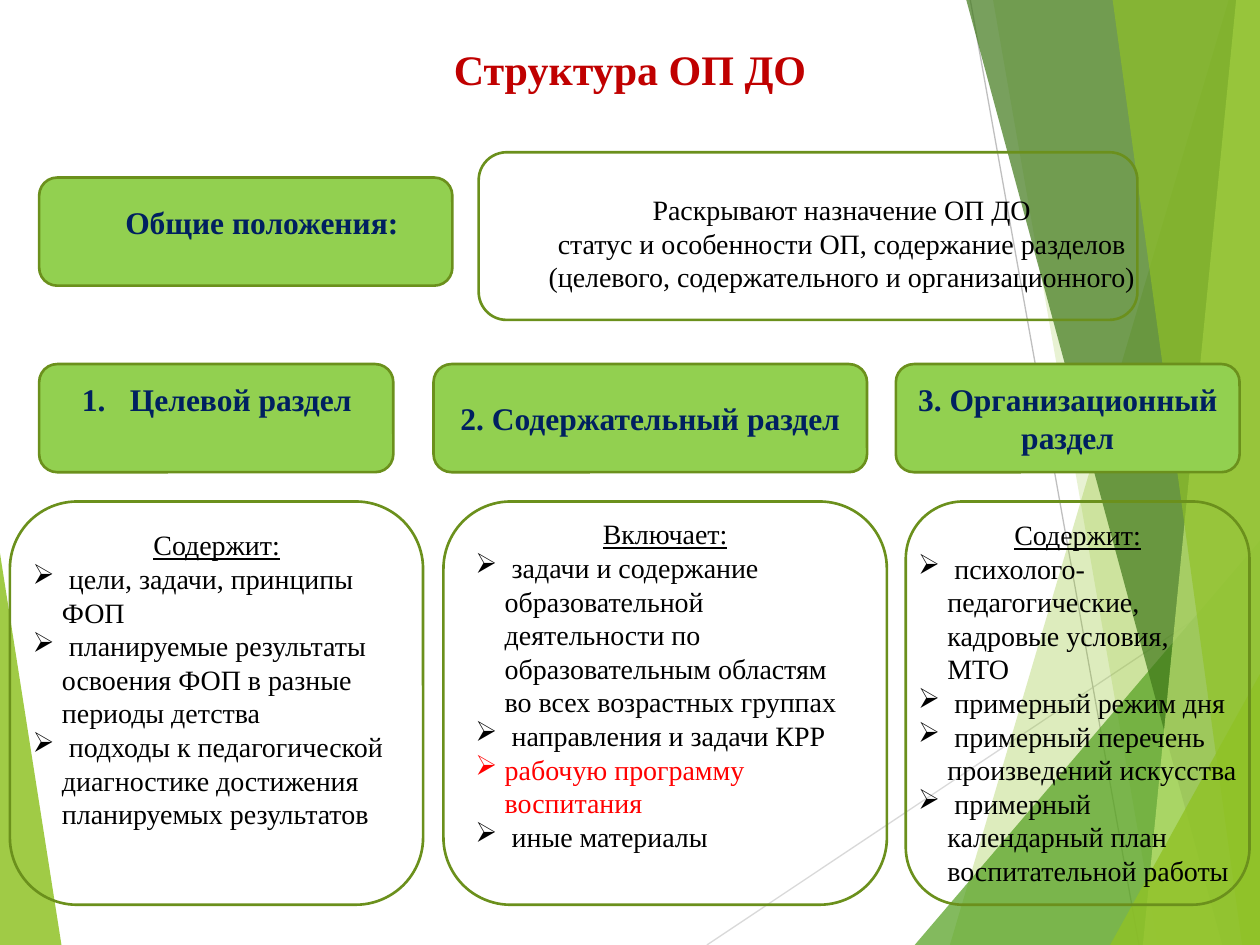
from lxml.etree import SubElement
from pptx import Presentation
from pptx.dml.color import RGBColor
from pptx.enum.shapes import MSO_CONNECTOR as Connector, MSO_SHAPE as Shape
from pptx.enum.text import MSO_ANCHOR as Anchor, MSO_AUTO_SIZE as AutoSize, PP_ALIGN as Align
from pptx.oxml.ns import qn
from pptx.util import Cm, Pt

WIDTH, HEIGHT = 25.4, 19.05
FONT = "Times New Roman"
COLORS = {
    "lime": "90C226", "leaf": "54A021", "forest": "3F7819", "pale": "C0E474",
    "button": "92D050", "border": "6B901C", "title": "C00000", "navy": "002060",
    "black": "000000", "red": "FF0000", "silver": "D9D9D9", "gray": "BFBFBF",
}
STYLES = {
    "title": {"size": Pt(24), "bold": True, "color": "title"},
    "heading": {"size": Pt(18), "bold": True, "color": "navy"},
    "body": {"size": Pt(16), "color": "black"},
    "lead": {"size": Pt(16), "underline": True, "color": "black"},
    "accent": {"size": Pt(16), "color": "red"},
}

LEFT_WEDGE = ("lime", 85, [(0, 11.15), (1.24, HEIGHT), (0, HEIGHT)])
RAYS = [
    ("silver", (14.25, HEIGHT), (WIDTH, 11.61)),
    ("gray", (19.56, 0), (22.96, HEIGHT)),
]


def right_band(color, opacity, top_x, bottom_x):
    return color, opacity, [(top_x, 0), (bottom_x, HEIGHT), (WIDTH, HEIGHT), (WIDTH, 0)]


def right_corner(color, opacity, bottom_x, right_y):
    return color, opacity, [(bottom_x, HEIGHT), (WIDTH, right_y), (WIDTH, HEIGHT)]


RIGHT_FACETS = [
    right_band("lime", 30, 24.77, 19.15),
    right_band("lime", 20, 20.02, 23.34),
    right_corner("leaf", 72, 18.44, 10.9),
    right_band("forest", 70, 19.48, 24.64),
    right_band("pale", 70, 24.92, 23.04),
    right_band("lime", 65, 22.43, 25.04),
    right_corner("lime", 80, 22.38, 13.59),
]

TITLE = "Структура ОП ДО"
GENERAL_HEADING = "Общие положения: "
GENERAL_LINES = [
    "Раскрывают назначение ОП ДО",
    "статус и особенности ОП, содержание разделов "
    "(целевого, содержательного и организационного)",
]
HEAD_TOP, HEAD_HEIGHT = 7.34, 2.18
BODY_TOP, BODY_HEIGHT = 10.11, 8.13
SECTIONS = [
    {"head": (0.79, 7.14), "body": (0.2, 8.33), "text_box": (0.41, 10.52, 7.92, 6.4),
     "number_box": (0.99, 7.54, 6.76, 1.02),
     "heading": "Целевой раздел", "lead": "Содержит:",
     "items": [" цели, задачи, принципы ФОП",
               " планируемые результаты освоения ФОП в разные периоды детства",
               " подходы к педагогической диагностике достижения планируемых результатов"]},
    {"head": (8.74, 8.74), "body": (8.94, 8.94),
     "heading": "2. Содержательный раздел", "lead": "Включает:",
     "items": [" задачи и содержание образовательной деятельности по образовательным "
               "областям во всех возрастных группах",
               " направления и задачи КРР",
               "рабочую программу воспитания",
               " иные материалы"],
     "accent": "рабочую программу воспитания"},
    {"head": (18.06, 6.93), "body": (18.26, 6.93), "text_box": (18.26, 10.31, 6.93, 7.87),
     "heading": "3. Организационный раздел", "lead": "Содержит:",
     "items": [" психолого-педагогические, кадровые условия, МТО",
               " примерный режим дня",
               " примерный перечень произведений искусства",
               " примерный календарный план воспитательной работы"]},
]


def rgb(name):
    return RGBColor.from_string(COLORS[name])


def add_facet(slide, color, opacity, points):
    corners = [(Cm(x), Cm(y)) for x, y in points]
    builder = slide.shapes.build_freeform(*corners[0])
    builder.add_line_segments(corners[1:], close=True)
    shape = builder.convert_to_shape()
    shape.shadow.inherit = False
    shape.fill.solid()
    shape.fill.fore_color.rgb = rgb(color)
    for node in shape.element.xpath("./p:spPr/a:solidFill/a:srgbClr"):
        SubElement(node, qn("a:alpha"), val=str(opacity * 1000))
    shape.line.fill.background()


def add_ray(slide, color, start, end):
    ray = slide.shapes.add_connector(Connector.STRAIGHT, *map(Cm, start + end))
    ray.line.color.rgb = rgb(color)
    ray.line.width = Pt(0.75)
    SubElement(ray.element.spPr, qn("a:effectLst"))


def add_panel(slide, box, fill=None):
    shape = slide.shapes.add_shape(Shape.ROUNDED_RECTANGLE, *map(Cm, box))
    shape.shadow.inherit = False
    if fill:
        shape.fill.solid()
        shape.fill.fore_color.rgb = rgb(fill)
    else:
        shape.fill.background()
    shape.line.color.rgb = rgb("border")
    shape.line.width = Pt(1.5)
    shape.text_frame.vertical_anchor = Anchor.MIDDLE
    return shape


def add_text_box(slide, box, paragraphs, auto_size=AutoSize.SHAPE_TO_FIT_TEXT):
    frame = slide.shapes.add_textbox(*map(Cm, box)).text_frame
    write(frame, paragraphs)
    frame.auto_size = auto_size


def set_marker(paragraph, marker, hang):
    properties = paragraph._p.get_or_add_pPr()
    properties.set("marL", str(Cm(hang)))
    properties.set("indent", str(-Cm(hang)))
    if marker == "number":
        SubElement(properties, qn("a:buAutoNum"), type="arabicPeriod")
    else:
        SubElement(properties, qn("a:buChar"), char=marker)


def write(frame, paragraphs):
    frame.word_wrap = True
    for index, (text, style, marker) in enumerate(paragraphs):
        paragraph = frame.add_paragraph() if index else frame.paragraphs[0]
        paragraph.alignment = Align.LEFT if marker == "➢" else Align.CENTER
        if marker:
            set_marker(paragraph, marker, 0.97 if marker == "number" else 0.59)
        run = paragraph.add_run()
        run.text = text
        run.font.name = FONT
        for name, value in STYLES[style].items():
            if name == "color":
                run.font.color.rgb = rgb(value)
            else:
                setattr(run.font, name, value)


def add_section(slide, section):
    left, width = section["head"]
    head = add_panel(slide, (left, HEAD_TOP, width, HEAD_HEIGHT), "button")
    if "number_box" in section:
        add_text_box(slide, section["number_box"], [(section["heading"], "heading", "number")])
    else:
        write(head.text_frame, [(section["heading"], "heading", None)])

    left, width = section["body"]
    body = add_panel(slide, (left, BODY_TOP, width, BODY_HEIGHT))
    paragraphs = [(section["lead"], "lead", None)]
    for item in section["items"]:
        style = "accent" if item == section.get("accent") else "body"
        paragraphs.append((item, style, "➢"))
    if "text_box" in section:
        add_text_box(slide, section["text_box"], paragraphs)
    else:
        write(body.text_frame, paragraphs)
        body.text_frame.margin_bottom = Cm(0.86)


def main():
    presentation = Presentation()
    presentation.slide_width, presentation.slide_height = Cm(WIDTH), Cm(HEIGHT)
    slide = presentation.slides.add_slide(presentation.slide_layouts[6])

    add_facet(slide, *LEFT_WEDGE)
    for ray in RAYS:
        add_ray(slide, *ray)
    for facet in RIGHT_FACETS:
        add_facet(slide, *facet)

    add_text_box(slide, (1.27, 0.76, 22.86, 2.41), [(TITLE, "title", None)], AutoSize.NONE)
    add_panel(slide, (0.79, 3.58, 8.33, 2.18), "button")
    add_panel(slide, (9.65, 3.07, 13.28, 3.38))
    add_text_box(slide, (1.4, 3.96, 7.92, 1.02), [(GENERAL_HEADING, "heading", None)])
    add_text_box(slide, (10.52, 3.76, 12.9, 2.31),
                 [(line, "body", None) for line in GENERAL_LINES])
    for section in SECTIONS:
        add_section(slide, section)
    presentation.save("out.pptx")


if __name__ == "__main__":
    main()
